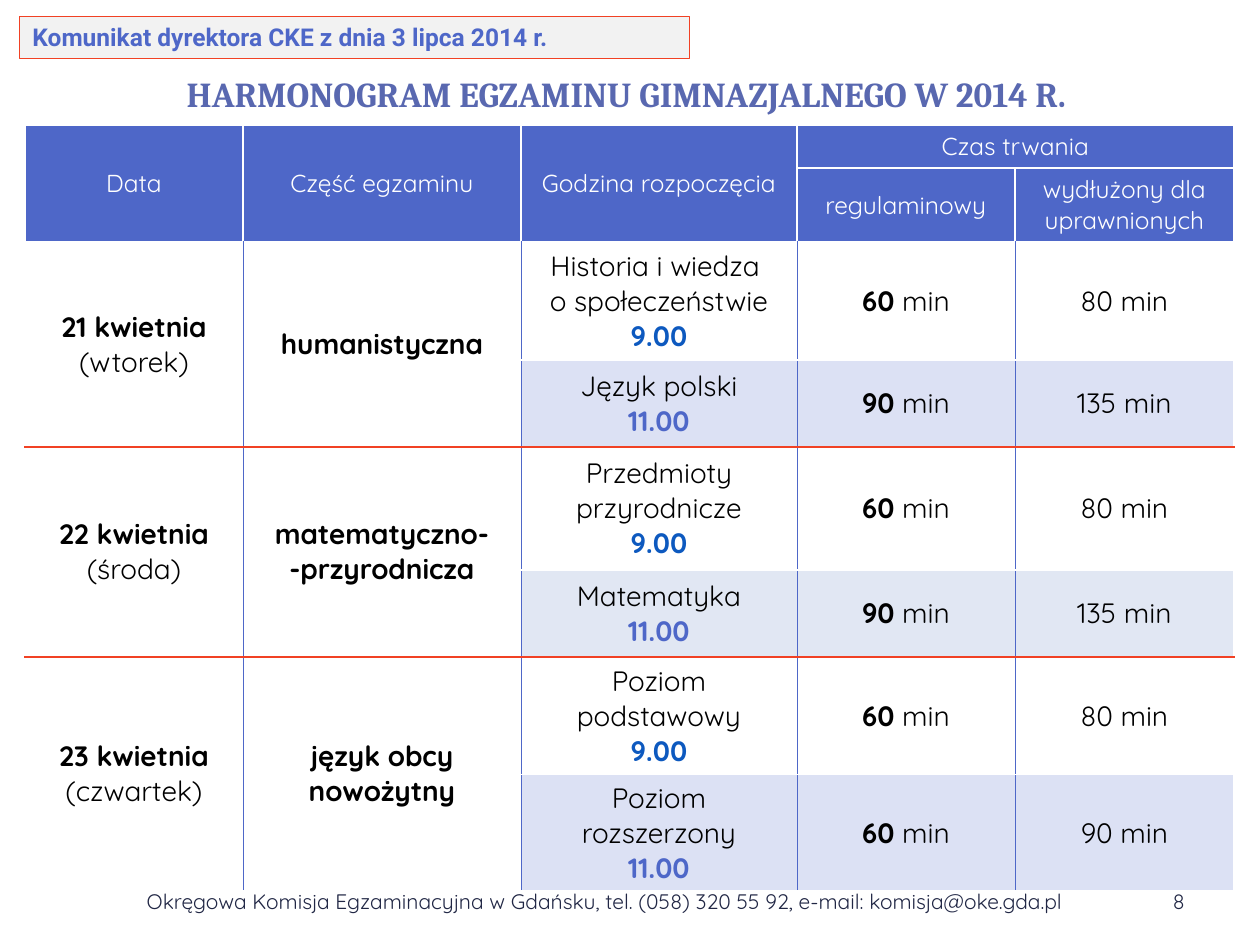
"""Build the slide with the 2014 lower-secondary exam timetable."""
from lxml import etree
from pptx import Presentation
from pptx.dml.color import RGBColor
from pptx.enum.shapes import MSO_SHAPE
from pptx.enum.text import MSO_ANCHOR, PP_ALIGN
from pptx.oxml.ns import qn
from pptx.util import Emu, Pt

LEFT, CENTER, RIGHT = PP_ALIGN.LEFT, PP_ALIGN.CENTER, PP_ALIGN.RIGHT
MIDDLE = MSO_ANCHOR.MIDDLE
RECT = MSO_SHAPE.RECTANGLE

WHITE = RGBColor(0xFF, 0xFF, 0xFF)
BLACK = RGBColor(0, 0, 0)
BLUE = RGBColor(0x4E, 0x67, 0xC8)
DEEP_BLUE = RGBColor(0x0D, 0x59, 0xBF)
TITLE_BLUE = RGBColor(0x59, 0x68, 0xB0)
NAVY = RGBColor(0x21, 0x27, 0x45)
RED = RGBColor(0xF1, 0x41, 0x24)
GRAY = RGBColor(0xF2, 0xF2, 0xF2)
LILAC = RGBColor(0xDC, 0xE1, 0xF4)
PALE_BLUE = RGBColor(0xE1, 0xE7, 0xF3)

BANNER = "Komunikat dyrektora CKE z dnia 3 lipca 2014 r."
TITLE = "HARMONOGRAM EGZAMINU GIMNAZJALNEGO W 2014 R."
FOOTER = ("Okręgowa Komisja Egzaminacyjna w Gdańsku, tel. (058) 320 55 92, "
          "e-mail: komisja@oke.gda.pl")
PAGE = "8"
HEADERS = [
    (0, 0, "Data"), (0, 1, "Część egzaminu"), (0, 2, "Godzina rozpoczęcia"),
    (0, 3, "Czas trwania"), (1, 3, "regulaminowy"),
    (1, 4, "wydłużony dla uprawnionych"),
]
DAYS = [
    ("21 kwietnia ", "(wtorek)", "humanistyczna", LILAC, [
        ("Historia i wiedza \vo społeczeństwie", "9.00", "60", "80 min"),
        ("Język polski", "11.00", "90", "135 min")]),
    ("22 kwietnia ", "(środa)", "matematyczno-\v-przyrodnicza", PALE_BLUE, [
        ("Przedmioty przyrodnicze", "9.00", "60", "80 min"),
        ("Matematyka", "11.00", "90", "135 min")]),
    ("23 kwietnia ", "(czwartek)", "język obcy nowożytny", LILAC, [
        ("Poziom podstawowy", "9.00", "60", "80 min"),
        ("Poziom rozszerzony", "11.00", "60", "90 min")]),
]
COLS = [218, 278, 276, 218, 219]
ROWS = [43, 74, 118, 87, 123, 87, 118, 116]
MERGES = [((0, c), (1, c)) for c in range(3)] + [((0, 3), (0, 4))]
MERGES += [((r, c), (r + 1, c)) for r in (2, 4, 6) for c in (0, 1)]


def px(n):
    return Emu(round(n * 914400 / 126))


def add_text(tf, text, new=False, size=16, font="Quicksand", color=BLACK,
             bold=False, align=CENTER):
    p = tf.add_paragraph() if new else tf.paragraphs[-1]
    p.alignment = align
    for i, part in enumerate(text.split("\v")):
        if i:
            p.add_line_break()
        r = p.add_run()
        r.text = part
        r.font.size, r.font.name, r.font.bold = Pt(size), font, bold
        r.font.color.rgb = color


def add_box(s, x, y, w, h, text, **fmt):
    tf = s.shapes.add_textbox(px(x), px(y), px(w), px(h)).text_frame
    tf.word_wrap = True
    tf.vertical_anchor = MIDDLE
    add_text(tf, text, **fmt)


def set_border(cell, side, color, width):
    ln = etree.SubElement(cell._tc.get_or_add_tcPr(), qn("a:ln" + side),
                          w=str(Pt(width)))
    fill = etree.SubElement(ln, qn("a:solidFill"))
    etree.SubElement(fill, qn("a:srgbClr"), val=str(color))


def style_cell(cell, row, col):
    body = row > 1
    fill = WHITE if body else BLUE
    if body and row % 2 and col > 1:
        fill = DAYS[row // 2 - 1][3]
    day_end = row in (3, 5) or (row in (2, 4) and col < 2)
    thin, edge = (BLUE, 0.25), (WHITE, 1)
    set_border(cell, "L", *(thin if body and col > 0 else edge))
    set_border(cell, "R", *(thin if body and col < 4 else edge))
    set_border(cell, "T", RED if row in (4, 6) else WHITE, 1)
    set_border(cell, "B", RED if day_end else WHITE, 1)
    cell.fill.solid()
    cell.fill.fore_color.rgb = fill
    cell.vertical_anchor = MIDDLE


def add_timetable(s):
    t = s.shapes.add_table(len(ROWS), len(COLS), px(25), px(125),
                           px(sum(COLS)), px(sum(ROWS))).table
    t.horz_banding = False
    for col, w in zip(t.columns, COLS):
        col.width = px(w)
    for row, h in zip(t.rows, ROWS):
        row.height = px(h)
    for r in range(len(ROWS)):
        for c in range(len(COLS)):
            style_cell(t.cell(r, c), r, c)
    for first, last in MERGES:
        t.cell(*first).merge(t.cell(*last))
    for r, c, text in HEADERS:
        add_text(t.cell(r, c).text_frame, text, size=14, color=WHITE)
    for d, (date, weekday, part, _, exams) in enumerate(DAYS):
        top = 2 + 2 * d
        tf = t.cell(top, 0).text_frame
        add_text(tf, date, bold=True)
        add_text(tf, weekday)
        add_text(t.cell(top, 1).text_frame, part, bold=True)
        for i, (subject, hour, minutes, extended) in enumerate(exams):
            tf = t.cell(top + i, 2).text_frame
            add_text(tf, subject)
            add_text(tf, hour, new=True, bold=True,
                     color=BLUE if i else DEEP_BLUE)
            tf = t.cell(top + i, 3).text_frame
            add_text(tf, minutes, bold=True)
            add_text(tf, " min")
            add_text(t.cell(top + i, 4).text_frame, extended)


def add_banner(s):
    sp = s.shapes.add_shape(RECT, px(20), px(16), px(670), px(42))
    sp.shadow.inherit = False
    sp.fill.solid()
    sp.fill.fore_color.rgb = GRAY
    sp.line.color.rgb = RED
    sp.line.width = Pt(0.5)
    add_text(sp.text_frame, BANNER, size=14, font="Roboto", color=BLUE,
             bold=True, align=LEFT)


def add_title(s):
    sp = s.shapes.title
    sp.left, sp.top, sp.width, sp.height = px(48), px(66), px(1157), px(55)
    sp.text_frame.vertical_anchor = MIDDLE
    add_text(sp.text_frame, TITLE, size=20, font="Cambria", color=TITLE_BLUE,
             bold=True)


def main():
    prs = Presentation()
    prs.slide_width, prs.slide_height = px(1260), px(945)
    s = prs.slides.add_slide(prs.slide_layouts[5])
    add_box(s, 94, 876, 1022, 50, FOOTER, size=12, color=NAVY)
    add_box(s, 903, 876, 294, 50, PAGE, size=12, color=NAVY, align=RIGHT)
    add_timetable(s)
    add_banner(s)
    add_title(s)
    prs.save("out.pptx")


if __name__ == "__main__":
    main()
